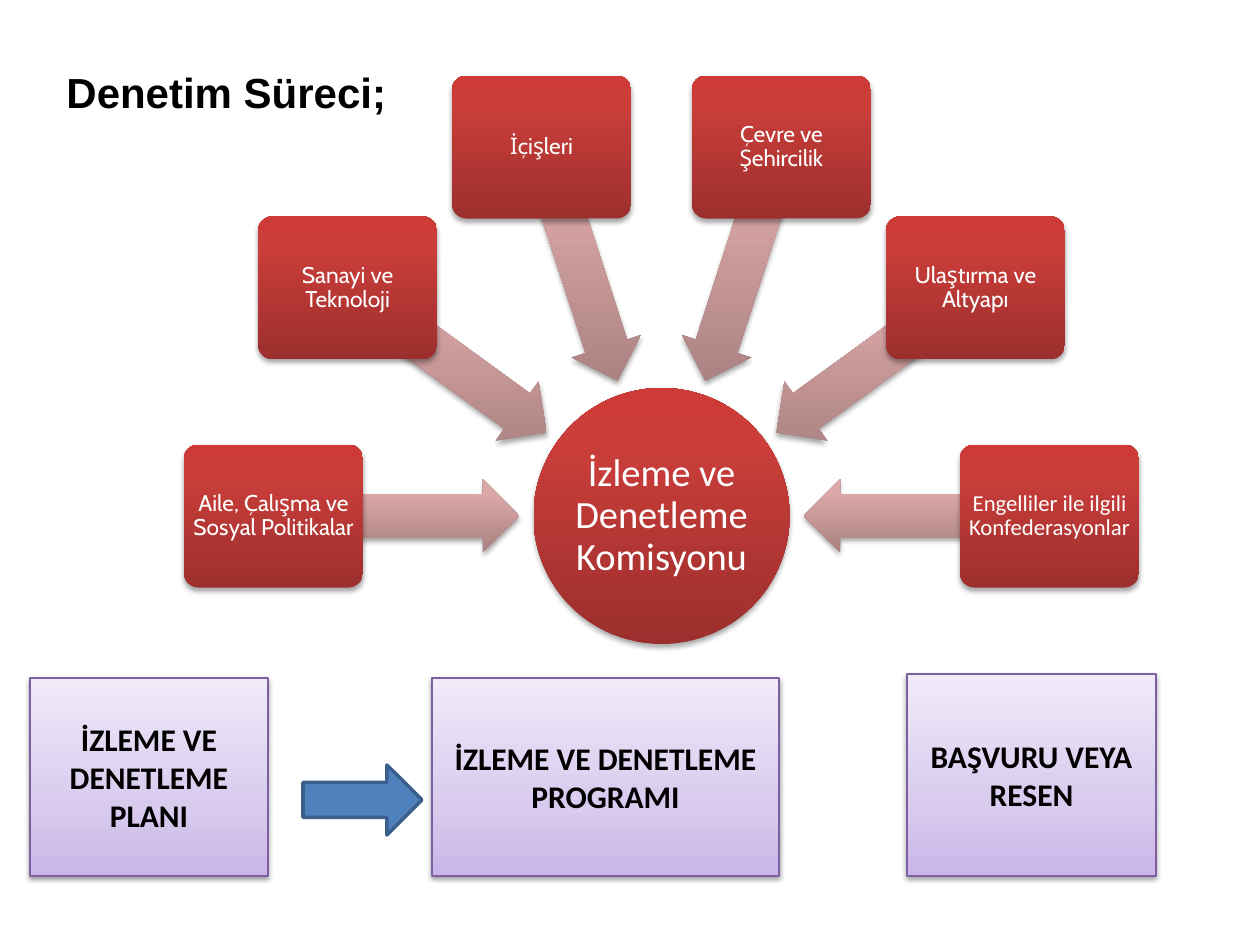
import math

from lxml import etree
from pptx import Presentation, util as u
from pptx.dml.color import RGBColor
from pptx.enum import shapes, text
from pptx.oxml.ns import qn

PX = 914400 / 126
RED = [(0, "9C2F2D"), (80, "CB3E3A"), (100, "CE3B37")]
PINK = [(0, "A98180"), (80, "DBA7A7"), (100, "DDA7A6")]
LILAC = [(0, "C9B5E8"), (35, "D8CBEE"), (100, "F0EAF9")]
MEMBERS = [
    ("Aile, Çalışma ve Sosyal Politikalar", "Cabin"),
    ("Sanayi ve Teknoloji", "Cabin"),
    ("İçişleri", "Cabin"),
    ("Çevre ve Şehircilik", "Cabin"),
    ("Ulaştırma ve Altyapı", "Cabin"),
    ("Engelliler ile ilgili Konfederasyonlar", "Calibri"),
]
STAGES = [
    ("BAŞVURU VEYA RESEN", (907, 674, 249, 202)),
    ("İZLEME VE DENETLEME PROGRAMI", (432, 678, 347, 198)),
    ("İZLEME VE DENETLEME PLANI", (30, 678, 238, 198)),
]


def px(value):
    return u.Emu(round(value * PX))


def rgb(value):
    return RGBColor.from_string(value)


def add_box(page, kind, box):
    """Add a preset shape with no outline and no shadow."""
    shape = page.shapes.add_shape(kind, *map(px, box))
    shape.shadow.inherit = False
    shape.line.fill.background()
    return shape


def centred(x, y, width, height):
    return x - width / 2, y - height / 2, width, height


def shade(shape, stops, shadow_alpha=35, shadow_distance=1.8):
    """Fill with a gradient rising from the bottom, over a soft shadow."""
    shape.fill.gradient()
    shape.fill.gradient_angle = 90
    properties = shape.element.spPr
    gradient = properties.find(qn("a:gradFill"))
    gradient.set("rotWithShape", "0")
    stop_list = gradient.find(qn("a:gsLst"))
    for stop in list(stop_list):
        stop_list.remove(stop)
    for position, colour in stops:
        stop = etree.SubElement(stop_list, qn("a:gs"), pos=str(position * 1000))
        etree.SubElement(stop, qn("a:srgbClr"), val=colour)

    shadow = etree.SubElement(
        properties.find(qn("a:effectLst")), qn("a:outerShdw"),
        blurRad=str(u.Pt(3.1)), dist=str(u.Pt(shadow_distance)),
        dir="5400000", rotWithShape="0")
    black = etree.SubElement(shadow, qn("a:srgbClr"), val="000000")
    etree.SubElement(black, qn("a:alpha"), val=str(shadow_alpha * 1000))


def write(shape, words, size, font, colour, bold=False, align=text.PP_ALIGN.CENTER):
    frame = shape.text_frame
    frame.text = words
    frame.word_wrap = True
    frame.vertical_anchor = text.MSO_ANCHOR.MIDDLE
    para = frame.paragraphs[0]
    para.alignment = align
    span = para.runs[0].font
    span.size, span.name, span.bold = u.Pt(size), font, bold
    span.color.rgb = rgb(colour)


def write_in_diagram(shape, words, size, font, inset):
    write(shape, words, size, font, "FFFFFF")
    frame = shape.text_frame
    frame.margin_left = frame.margin_right = px(inset)
    frame.margin_top = frame.margin_bottom = px(inset)
    frame.paragraphs[0].line_spacing = 0.9


def add_title(page, box):
    title = page.shapes.add_textbox(*map(px, box))
    write(title, "Denetim Süreci;", 24, "Arial", "000000", True, text.PP_ALIGN.LEFT)
    frame = title.text_frame
    frame.vertical_anchor = text.MSO_ANCHOR.TOP
    frame.word_wrap = False
    frame.auto_size = text.MSO_AUTO_SIZE.SHAPE_TO_FIT_TEXT


def add_commission(page, box):
    """Hub with members on a half circle, each pointing at the hub."""
    left, top, width, height = box
    hub_size, node_width, node_height = 256, 179, 143
    centre_x = left + width / 2
    centre_y = top + height - hub_size / 2
    node_radius = (width - node_width) / 2
    arrow_radius = 265

    hub = add_box(page, shapes.MSO_SHAPE.OVAL,
                  centred(centre_x, centre_y, hub_size, hub_size))
    shade(hub, RED)
    write_in_diagram(hub, "İzleme ve Denetleme Komisyonu", 22, "Calibri", 3)

    for index, (name, font) in enumerate(MEMBERS):
        angle = 180 + index * 180 / (len(MEMBERS) - 1)
        across, down = math.cos(math.radians(angle)), math.sin(math.radians(angle))

        arrow = add_box(page, shapes.MSO_SHAPE.LEFT_ARROW, centred(
            centre_x + arrow_radius * across, centre_y + arrow_radius * down, 246, 73))
        arrow.adjustments[0], arrow.adjustments[1] = 0.6, 0.5
        arrow.rotation = angle % 360
        shade(arrow, PINK)

        node = add_box(page, shapes.MSO_SHAPE.ROUNDED_RECTANGLE, centred(
            centre_x + node_radius * across, centre_y + node_radius * down,
            node_width, node_height))
        node.adjustments[0] = 0.1
        shade(node, RED)
        write_in_diagram(node, name, 13, font, 4)


def add_stage(page, words, box):
    stage = add_box(page, shapes.MSO_SHAPE.RECTANGLE, box)
    shade(stage, LILAC, 38, 1.6)
    stage.line.color.rgb = rgb("7D60A0")
    stage.line.width = u.Pt(0.75)
    write(stage, words, 18, "Calibri", "000000", True)


def add_stage_arrow(page, box):
    arrow = add_box(page, shapes.MSO_SHAPE.RIGHT_ARROW, box)
    arrow.fill.solid()
    arrow.fill.fore_color.rgb = rgb("4F81BD")
    arrow.line.color.rgb = rgb("3A5F8C")
    arrow.line.width = u.Pt(2)


def main():
    deck = Presentation()
    deck.slide_width, deck.slide_height = px(1260), px(945)
    page = deck.slides.add_slide(deck.slide_layouts[6])
    add_commission(page, (184, 75, 955, 569))
    for words, box in STAGES:
        add_stage(page, words, box)
    add_title(page, (54, 60, 349, 63))
    add_stage_arrow(page, (303, 765, 119, 70))
    deck.save("out.pptx")


if __name__ == "__main__":
    main()
